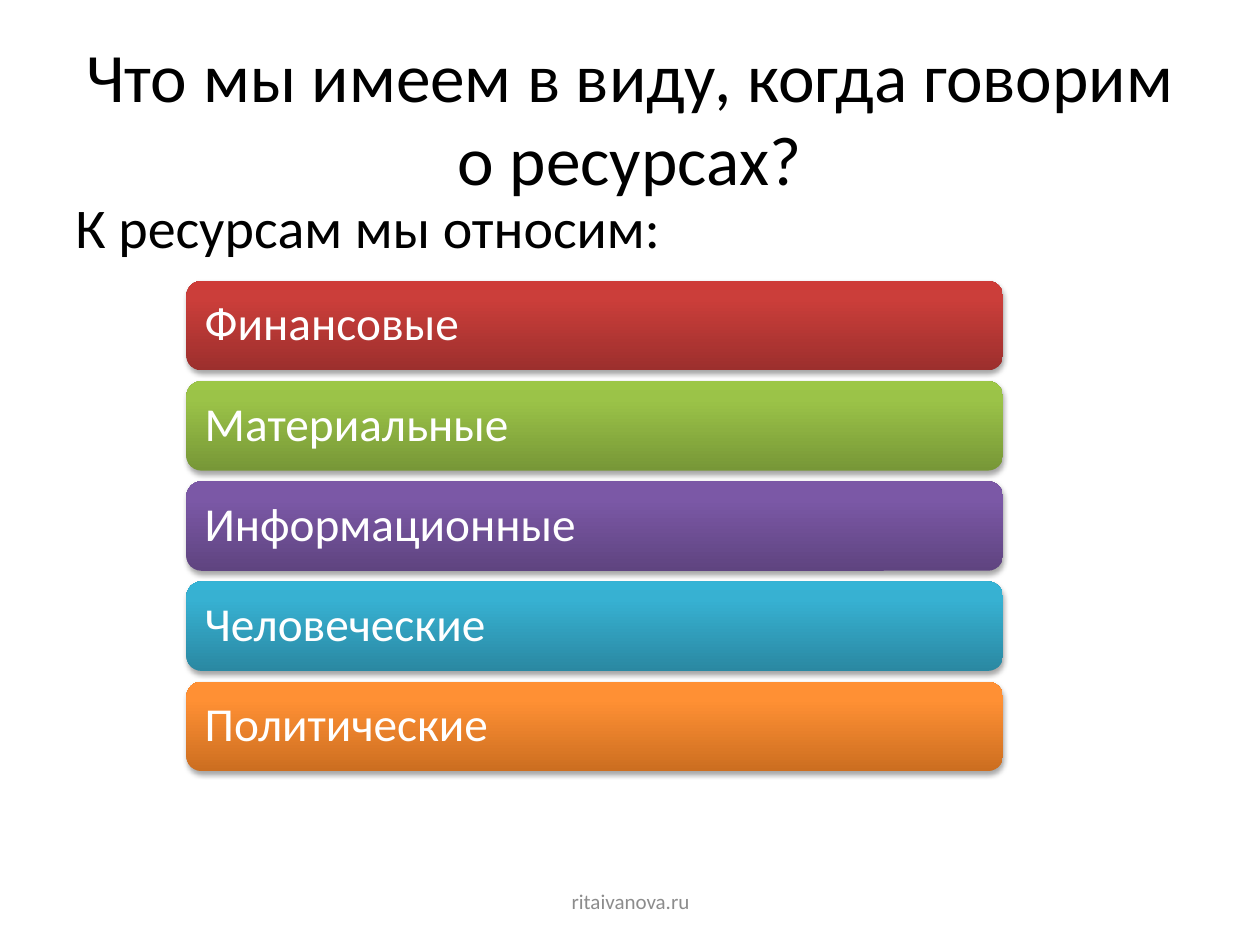
from lxml import etree
from pptx import Presentation
from pptx.dml.color import RGBColor
from pptx.enum.shapes import MSO_SHAPE as Shape
from pptx.enum.text import MSO_ANCHOR as Anchor, PP_ALIGN as Align
from pptx.oxml import parse_xml
from pptx.oxml.ns import nsdecls, qn
from pptx.util import Inches, Pt

RESOURCES = [
    ("Финансовые", ("9C2F2D", "CB3E3A", "CE3B37")),
    ("Материальные", ("779737", "9BC348", "9DC746")),
    ("Информационные", ("5F4480", "7B58A6", "7C57A8")),
    ("Человеческие", ("2A88A2", "37B1D2", "34B4D6")),
    ("Политические", ("CC6E20", "FF9034", "FF9136")),
]
FIRST_BAR_TOP = 2.23
BAR_HEIGHT = 0.71
BAR_GAP = 0.085


def color(value):
    return RGBColor.from_string(value)


class SlideBuilder:
    font = "Calibri"

    def __init__(self, slide):
        self.slide = slide

    def set_text(self, shape, text, size, ink, align, anchor):
        frame = shape.text_frame
        frame.word_wrap = True
        frame.vertical_anchor = anchor
        frame.text = text
        para = frame.paragraphs[0]
        para.alignment = align
        span = para.runs[0]
        span.font.name = self.font
        span.font.size = Pt(size)
        span.font.color.rgb = color(ink)
        return para

    def text(self, place, text, size, ink="000000", align=Align.CENTER, anchor=Anchor.MIDDLE):
        box = self.slide.shapes.add_textbox(*map(Inches, place))
        return self.set_text(box, text, size, ink, align, anchor)

    def bar(self, place, text, shades):
        bar = self.slide.shapes.add_shape(Shape.ROUNDED_RECTANGLE, *map(Inches, place))
        bar.line.fill.background()
        self.shade(bar, shades)
        self.cast_shadow(bar)
        frame = bar.text_frame
        frame.margin_left = frame.margin_right = Inches(0.11)
        frame.margin_top = frame.margin_bottom = Inches(0.11)
        para = self.set_text(bar, text, 27, "FFFFFF", Align.LEFT, Anchor.MIDDLE)
        para.line_spacing = 0.9

    def shade(self, shape, shades):
        """Fill with a three-stop gradient running from bottom to top."""
        shape.fill.gradient()
        gradient = shape._element.spPr.find(qn("a:gradFill"))
        stops = gradient.find(qn("a:gsLst"))
        for stop in list(stops):
            stops.remove(stop)
        for position, shade in zip((0, 80, 100), shades):
            stop = etree.SubElement(stops, qn("a:gs"), pos=str(position * 1000))
            etree.SubElement(stop, qn("a:srgbClr"), val=shade)
        gradient.find(qn("a:lin")).set("ang", str(270 * 60000))

    def cast_shadow(self, shape):
        shape.shadow.inherit = False
        effects = shape._element.spPr.find(qn("a:effectLst"))
        effects.append(parse_xml(
            f'<a:outerShdw {nsdecls("a")} blurRad="{Pt(3.1)}" dist="{Pt(1.8)}" '
            'dir="5400000" rotWithShape="0"><a:srgbClr val="000000">'
            '<a:alpha val="35000"/></a:srgbClr></a:outerShdw>'))


def main():
    deck = Presentation()
    deck.slide_width, deck.slide_height = Inches(10), Inches(7.5)
    page = SlideBuilder(deck.slides.add_slide(deck.slide_layouts[6]))

    page.text((0.5, 0.3, 9, 1.25), "Что мы имеем в виду, когда говорим о ресурсах?", 39.6)
    intro = page.text((0.5, 1.48, 9, 4.95), "К ресурсам мы относим:", 32,
                      align=Align.LEFT, anchor=Anchor.TOP)
    intro.space_before = Pt(2)
    for row, (name, shades) in enumerate(RESOURCES):
        top = FIRST_BAR_TOP + row * (BAR_HEIGHT + BAR_GAP)
        page.bar((1.48, top, 6.48, BAR_HEIGHT), name, shades)
    page.text((3.42, 6.95, 3.17, 0.4), "ritaivanova.ru", 12, "8C8C8C")

    deck.save("out.pptx")


if __name__ == "__main__":
    main()
